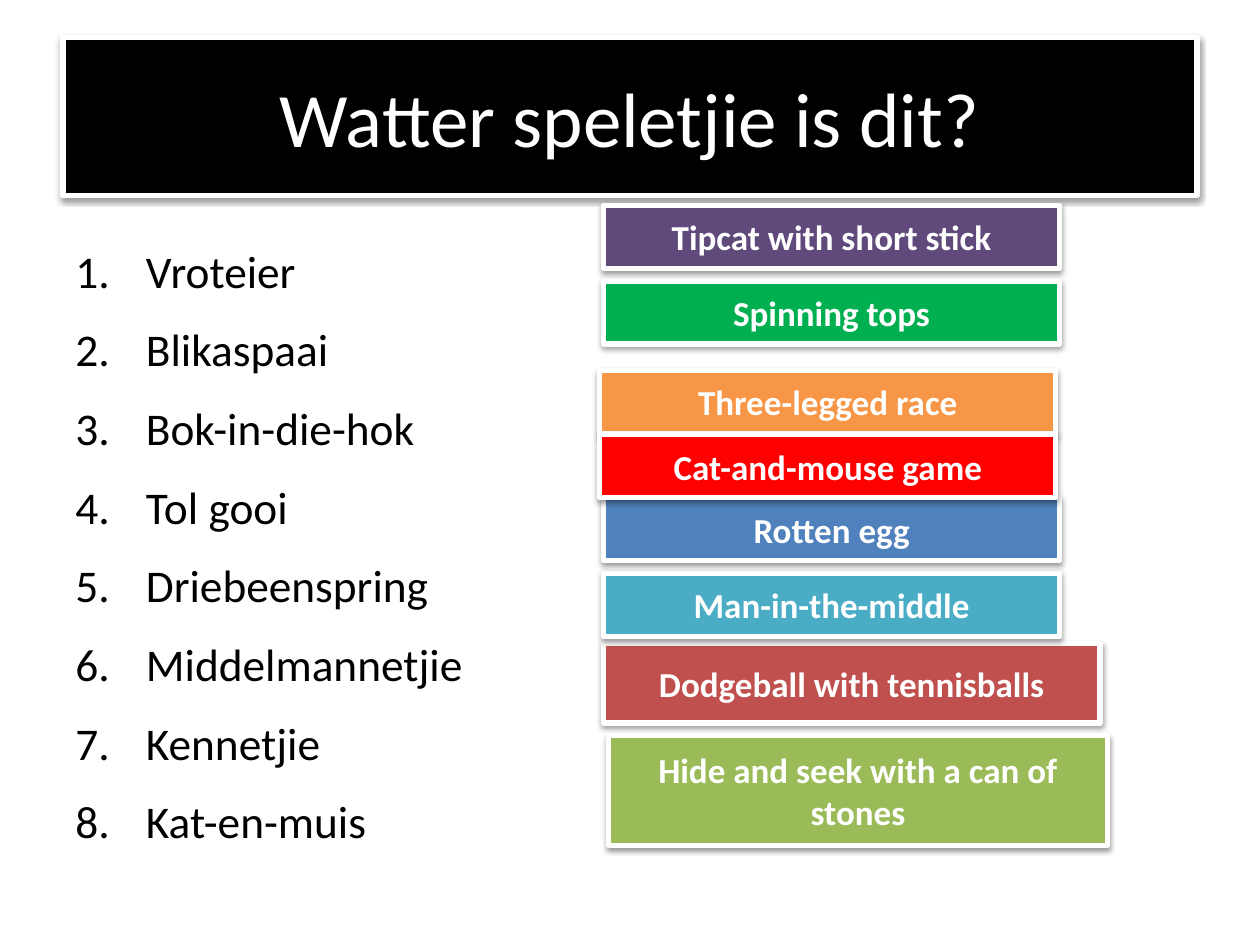
from lxml import etree
from pptx import Presentation
from pptx.dml.color import RGBColor
from pptx.enum.shapes import MSO_SHAPE
from pptx.enum.text import MSO_ANCHOR, PP_ALIGN
from pptx.oxml.ns import qn
from pptx.util import Inches, Pt

RECTANGLE = MSO_SHAPE.RECTANGLE
MIDDLE = MSO_ANCHOR.MIDDLE
CENTER, LEFT = PP_ALIGN.CENTER, PP_ALIGN.LEFT

BLACK = RGBColor(0x00, 0x00, 0x00)
WHITE = RGBColor(0xFF, 0xFF, 0xFF)
GREEN = RGBColor(0x00, 0xB0, 0x50)
BRICK = RGBColor(0xC0, 0x50, 0x4D)
TEAL = RGBColor(0x4B, 0xAC, 0xC6)
OLIVE = RGBColor(0x9B, 0xBB, 0x59)
ORANGE = RGBColor(0xF7, 0x96, 0x46)
BLUE = RGBColor(0x4F, 0x81, 0xBD)
RED = RGBColor(0xFF, 0x00, 0x00)
PURPLE = RGBColor(0x60, 0x4A, 0x7B)

COLUMNS, ROWS = 100, 75
TITLE_ONLY = 5
CARD_SIZE = (36.2, 5)

GAMES = ["Vroteier", "Blikaspaai", "Bok-in-die-hok", "Tol gooi",
         "Driebeenspring", "Middelmannetjie", "Kennetjie", "Kat-en-muis"]

MEANINGS = [
    ("Spinning tops", GREEN, (47.9, 22.3), CARD_SIZE),
    ("Dodgeball with tennisballs", BRICK, (47.9, 51.1), (39.4, 6.3)),
    ("Man-in-the-middle", TEAL, (47.9, 45.5), CARD_SIZE),
    ("Hide and seek with a can of stones", OLIVE, (48.3, 58.4), (39.6, 8.7)),
    ("Three-legged race", ORANGE, (47.6, 29.4), CARD_SIZE),
    ("Rotten egg", BLUE, (47.9, 39.5), CARD_SIZE),
    ("Cat-and-mouse game", RED, (47.6, 34.5), CARD_SIZE),
    ("Tipcat with short stick", PURPLE, (47.9, 16.3), CARD_SIZE),
]


def write(paragraph, text, size=20, color=WHITE, bold=False, align=CENTER):
    """Put formatted text into a paragraph."""
    paragraph.alignment = align
    run = paragraph.add_run()
    run.text = text
    run.font.name = "Calibri"
    run.font.size = Pt(size)
    run.font.bold = bold
    run.font.color.rgb = color


class GameSlide:
    """Draws framed panels and a numbered list on a slide grid."""

    def __init__(self, deck):
        self.cell_width = deck.slide_width / COLUMNS
        self.cell_height = deck.slide_height / ROWS
        self.slide = deck.slides.add_slide(deck.slide_layouts[TITLE_ONLY])

    def box(self, position, size):
        return [round(cells * unit) for cells, unit in
                zip(position + size, (self.cell_width, self.cell_height) * 2)]

    def frame(self, panel, fill):
        panel.fill.solid()
        panel.fill.fore_color.rgb = fill
        panel.line.color.rgb = WHITE
        panel.line.width = Pt(3)
        panel.shadow.inherit = False
        effects = panel._element.spPr.find(qn("a:effectLst"))
        shadow = etree.SubElement(effects, qn("a:outerShdw"), blurRad="40000",
                                  dist="20000", dir="5400000", rotWithShape="0")
        shade = etree.SubElement(shadow, qn("a:srgbClr"), val=str(BLACK))
        etree.SubElement(shade, qn("a:alpha"), val="38000")
        panel.text_frame.word_wrap = True
        panel.text_frame.vertical_anchor = MIDDLE

    def title(self, text, position, size):
        heading = self.slide.shapes.title
        heading.left, heading.top, heading.width, heading.height = self.box(position, size)
        self.frame(heading, BLACK)
        write(heading.text_frame.paragraphs[0], text, size=44)

    def card(self, text, fill, position, size):
        card = self.slide.shapes.add_shape(RECTANGLE, *self.box(position, size))
        self.frame(card, fill)
        write(card.text_frame.paragraphs[0], text, bold=True)

    def numbered_list(self, items, position, size):
        frame = self.slide.shapes.add_textbox(*self.box(position, size)).text_frame
        frame.word_wrap = True
        for index, item in enumerate(items):
            paragraph = frame.add_paragraph() if index else frame.paragraphs[0]
            write(paragraph, item, size=25.9, color=BLACK, align=LEFT)
            paragraph.line_spacing = 1.3
            paragraph.space_before = Pt(4.5)
            properties = paragraph._p.get_or_add_pPr()
            indent = Inches(0.56)
            properties.set("marL", str(indent))
            properties.set("indent", str(-indent))
            etree.SubElement(properties, qn("a:buFont"), typeface="+mj-lt")
            etree.SubElement(properties, qn("a:buAutoNum"), type="arabicPeriod")


def main():
    deck = Presentation()
    deck.slide_width, deck.slide_height = Inches(10), Inches(7.5)
    quiz = GameSlide(deck)
    quiz.title("Watter speletjie is dit?", (5, 3), (90, 12.5))
    quiz.numbered_list(GAMES, (5, 17.5), (39.5, 55.4))
    for meaning in MEANINGS:
        quiz.card(*meaning)
    deck.save("out.pptx")


if __name__ == "__main__":
    main()
